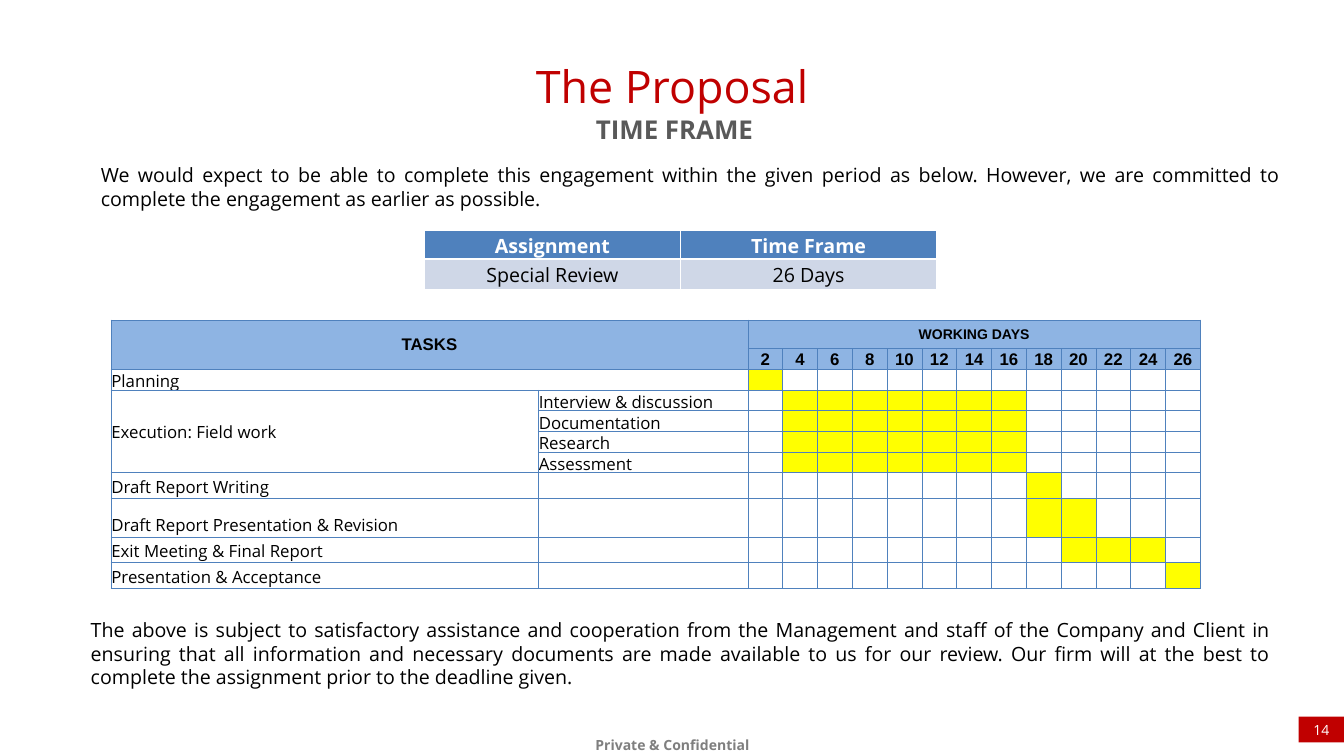
from dataclasses import dataclass, field

from lxml.etree import SubElement
from pptx import Presentation
from pptx.dml.color import RGBColor
from pptx.enum.shapes import MSO_SHAPE as Preset
from pptx.enum.text import MSO_ANCHOR as Anchor, PP_ALIGN as Align
from pptx.oxml.ns import qn
from pptx.util import Emu, Inches, Pt

COLOURS = {
    "red": "C00000", "white": "FFFFFF", "black": "000000", "slate": "595959",
    "grey": "7F7F7F", "blue": "4F81BD", "sky": "8EB4E3", "pale": "CFD7E7",
    "yellow": "FFFF00",
}
SLIDE_WIDTH, SLIDE_HEIGHT = Inches(26.67), Inches(15)
BODY_FONT = "Open Sans"
WIDE_INSETS = (0.27, 0.13, 0.27, 0.13)
CELL_INSETS = (0.01, 0.01, 0.01, 0)


@dataclass
class Style:
    size: float
    colour: str = "black"
    bold: bool = False
    name: str = BODY_FONT
    align: Align = Align.LEFT
    anchor: Anchor = Anchor.TOP
    insets: tuple = WIDE_INSETS
    spacing: float | None = None


@dataclass
class Block:
    """Text in a frame of left, top, width, height in percent of the slide."""
    text: str
    frame: tuple
    style: Style
    fill: str | None = None


@dataclass
class Task:
    name: str
    step: str
    height: float
    days: range = field(default_factory=range)


def across(percent: float) -> Emu:
    return Emu(round(SLIDE_WIDTH * percent / 100))


def down(percent: float) -> Emu:
    return Emu(round(SLIDE_HEIGHT * percent / 100))


def rgb(name: str) -> RGBColor:
    return RGBColor.from_string(COLOURS[name])


def write(text_frame, text: str, style: Style) -> None:
    para = text_frame.paragraphs[0]
    para.alignment = style.align
    if style.spacing:
        para.line_spacing = style.spacing
    span = para.add_run()
    span.text = text
    formats = {"name": style.name, "size": Pt(style.size), "bold": style.bold}
    for attribute, value in formats.items():
        setattr(span.font, attribute, value)
    span.font.color.rgb = rgb(style.colour)


def draw_block(page, block: Block) -> None:
    left, top, width, height = block.frame
    place = across(left), down(top), across(width), down(height)
    if block.fill:
        box = page.shapes.add_shape(Preset.RECTANGLE, *place)
        box.shadow.inherit = False
        box.fill.solid()
        box.fill.fore_color.rgb = rgb(block.fill)
        box.line.fill.background()
    else:
        box = page.shapes.add_textbox(*place)
    text_frame = box.text_frame
    text_frame.word_wrap = True
    text_frame.vertical_anchor = block.style.anchor
    for side, inset in zip(("left", "top", "right", "bottom"), block.style.insets):
        setattr(text_frame, f"margin_{side}", Inches(inset))
    write(text_frame, block.text, block.style)


def draw_grid(page, left: float, top: float, columns: list, rows: list):
    table = page.shapes.add_table(len(rows), len(columns), across(left), down(top),
                                  across(sum(columns)), down(sum(rows))).table
    table.first_row = table.horz_banding = False
    for column, width in zip(table.columns, columns):
        column.width = across(width)
    for row, height in zip(table.rows, rows):
        row.height = down(height)
    return table


def format_cell(cell, fill: str | None, border: str, insets: tuple, bottom: float = 1) -> None:
    for side, inset in zip(("left", "top", "right", "bottom"), insets):
        setattr(cell, f"margin_{side}", Inches(inset))
    properties = cell._tc.get_or_add_tcPr()
    for side in "LRTB":
        weight = bottom if side == "B" else 1
        line = SubElement(properties, qn(f"a:ln{side}"), w=str(Pt(weight)))
        solid = SubElement(line, qn("a:solidFill"))
        SubElement(solid, qn("a:srgbClr"), val=COLOURS[border])
    if fill:
        cell.fill.solid()
        cell.fill.fore_color.rgb = rgb(fill)
    else:
        cell.fill.background()


def label(cell, text: str, style: Style) -> None:
    cell.vertical_anchor = style.anchor
    write(cell.text_frame, text, style)


# Text blocks
BODY = Style(28, align=Align.JUSTIFY)
BLOCKS = [
    Block("Private & Confidential", (43.23, 96.13, 13.61, 5.2),
          Style(20, "grey", True, align=Align.CENTER,
                insets=(0.24, 0.12, 0.24, 0.12), spacing=1.2)),
    Block("14", (96.63, 94.8, 3.37, 3.4),
          Style(20, "white", align=Align.CENTER, anchor=Anchor.MIDDLE,
                insets=(0, 0.2, 0, 0.2)), "red"),
    Block("The Proposal", (5.74, 6.93, 88.53, 9), Style(64, "red", align=Align.CENTER)),
    Block("TIME FRAME", (5.92, 14.2, 88.53, 6),
          Style(37, "slate", True, align=Align.CENTER)),
    Block("We would expect to be able to complete this engagement within the given "
          "period as below. However, we are committed to complete the engagement as "
          "earlier as possible.", (6.49, 20.73, 89.73, 7.73), BODY, "white"),
    Block("The above is subject to satisfactory assistance and cooperation from the "
          "Management and staff of the Company and Client in ensuring that all "
          "information and necessary documents are made available to us for our "
          "review. Our firm will at the best to complete the assignment prior to the "
          "deadline given.", (5.74, 80.87, 89.73, 11.07), BODY, "white"),
]

# Schedule: each task and the working days it fills
WORKING_DAYS = range(2, 27, 2)
FIELD_DAYS = range(4, 17, 2)
TASKS = [
    Task("Planning", "", 2.53, range(2, 3)),
    Task("Execution: Field work", "Interview & discussion", 2.53, FIELD_DAYS),
    Task("", "Documentation", 2.53, FIELD_DAYS),
    Task("", "Research", 2.53, FIELD_DAYS),
    Task("", "Assessment", 2.53, FIELD_DAYS),
    Task("Draft Report Writing", "", 3.4, range(18, 19)),
    Task("Draft Report Presentation & Revision", "", 5.07, range(18, 21)),
    Task("Exit Meeting & Final Report", "", 3.4, range(20, 25)),
    Task("Presentation & Acceptance", "", 3.4, range(26, 27)),
]
ASSIGNMENT = [("Assignment", "Time Frame"), ("Special Review", "26 Days")]


def draw_schedule(page) -> None:
    columns = [31.8, 15.6] + [2.59] * len(WORKING_DAYS)
    table = draw_grid(page, 8.25, 42.33, columns, [3.8, 2.53] + [t.height for t in TASKS])
    heading = Style(24, bold=True, name="Arial", align=Align.CENTER, anchor=Anchor.MIDDLE)
    small_heading = Style(20, bold=True, name="Arial", align=Align.CENTER,
                          anchor=Anchor.MIDDLE)
    for row in range(len(TASKS) + 2):
        for column in range(len(columns)):
            fill = "sky" if row < 2 else None
            if row > 1 and column > 1 and WORKING_DAYS[column - 2] in TASKS[row - 2].days:
                fill = "yellow"
            format_cell(table.cell(row, column), fill, "blue", CELL_INSETS)
    for first, last in [((0, 0), (1, 1)), ((0, 2), (0, len(columns) - 1)),
                        ((2, 0), (2, 1)), ((3, 0), (6, 0))]:
        table.cell(*first).merge(table.cell(*last))
    label(table.cell(0, 0), "TASKS", heading)
    label(table.cell(0, 2), "WORKING DAYS", small_heading)
    for column, day in enumerate(WORKING_DAYS, 2):
        label(table.cell(1, column), str(day), heading)
    for row, task in enumerate(TASKS, 2):
        for column, text in enumerate((task.name, task.step)):
            cell = table.cell(row, column)
            if text:
                anchor = Anchor.MIDDLE if cell.is_merge_origin and row == 3 else Anchor.BOTTOM
                label(cell, text, Style(24, anchor=anchor))


def draw_assignment(page) -> None:
    table = draw_grid(page, 31.57, 30.47, [19.06, 19.06], [3.2, 4])
    looks = [("blue", "white", True, 3), ("pale", "black", False, 1)]
    for row, (texts, look) in enumerate(zip(ASSIGNMENT, looks)):
        fill, colour, bold, bottom = look
        for column, text in enumerate(texts):
            cell = table.cell(row, column)
            format_cell(cell, fill, "white", (0.1, 0.05, 0.1, 0.05), bottom)
            label(cell, text, Style(28, colour, bold, align=Align.CENTER))


def main() -> None:
    deck = Presentation()
    deck.slide_width, deck.slide_height = SLIDE_WIDTH, SLIDE_HEIGHT
    page = deck.slides.add_slide(deck.slide_layouts[6])
    for block in BLOCKS:
        draw_block(page, block)
    draw_schedule(page)
    draw_assignment(page)
    deck.save("out.pptx")


if __name__ == "__main__":
    main()
